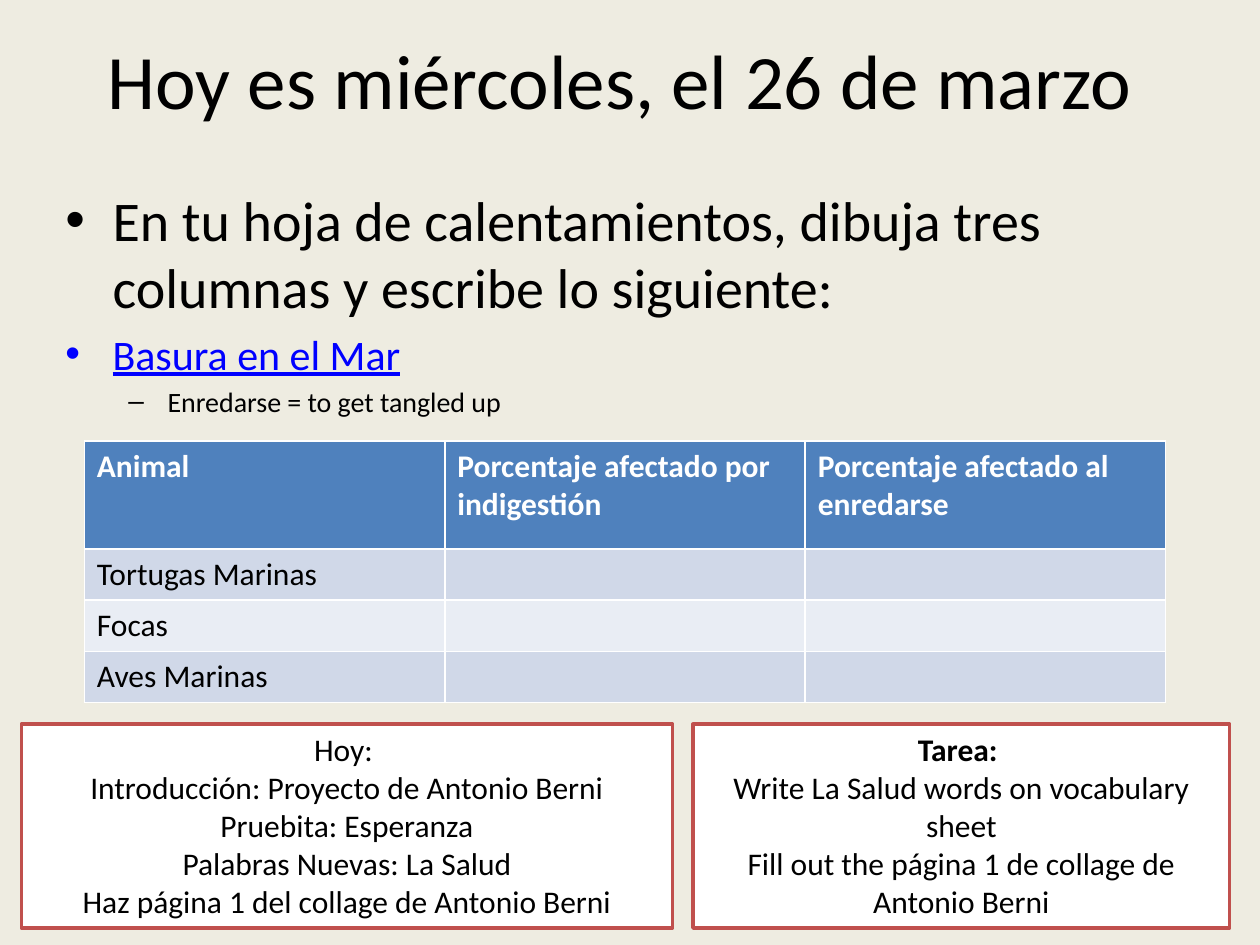
from dataclasses import dataclass

from lxml.etree import SubElement
from pptx import Presentation
from pptx.dml.color import RGBColor as Rgb
from pptx.enum.shapes import MSO_SHAPE as Shape
from pptx.enum.text import MSO_ANCHOR as Anchor, MSO_AUTO_SIZE as AutoSize, PP_ALIGN as Align
from pptx.oxml.ns import qn
from pptx.util import Cm, Pt


@dataclass(frozen=True)
class Theme:
    font: str = "Calibri"
    background: str = "EEECE1"
    ink: str = "000000"
    paper: str = "FFFFFF"
    link: str = "0000FF"
    header: str = "4F81BD"
    bands: tuple = ("D0D8E8", "E9EDF4")
    frame: str = "C0504D"
    title_size: int = 44
    task_size: int = 32
    link_size: int = 24
    note_size: int = 16
    body_size: int = 18


THEME = Theme()

TITLE = "Hoy es miércoles, el 26 de marzo"
WARM_UP = [
    ("En tu hoja de calentamientos, dibuja tres columnas y escribe lo siguiente:",
     0, THEME.task_size, THEME.ink),
    ("Basura en el Mar", 0, THEME.link_size, THEME.link),
    ("Enredarse = to get tangled up", 1, THEME.note_size, THEME.ink),
]
BULLETS = [("•", 0.95, 0.95), ("–", 2.06, 0.79)]
HEADINGS = ["Animal", "Porcentaje afectado por indigestión", "Porcentaje afectado al enredarse"]
ANIMALS = ["Tortugas Marinas", "Focas", "Aves Marinas"]
AGENDA = [
    "Hoy: ",
    "Introducción: Proyecto de Antonio Berni",
    "Pruebita: Esperanza",
    "Palabras Nuevas: La Salud",
    "Haz página 1 del collage de Antonio Berni",
]
HOMEWORK = [
    "Tarea: ",
    "Write La Salud words on vocabulary sheet",
    "Fill out the página 1 de collage de Antonio Berni",
]
PANELS = [(AGENDA, 0.43, 13.13, False), (HOMEWORK, 13.97, 10.82, True)]
PANEL_TOP, PANEL_HEIGHT = 14.6, 4.11
TEXT_LEFT, TEXT_WIDTH = 1.07, 22.86
TABLE_LEFT, TABLE_TOP, TABLE_WIDTH = 1.7, 8.89, 21.8
HEADER_HEIGHT, ROW_HEIGHT = 2.18, 1.03


def style(paragraph, size, color, bold=False):
    font = paragraph.font
    font.name, font.size, font.bold = THEME.font, Pt(size), bold
    font.color.rgb = Rgb.from_string(color)


def paint(fill, color):
    fill.solid()
    fill.fore_color.rgb = Rgb.from_string(color)


def write_lines(frame, lines):
    frame.text = "\n".join(lines)
    return frame.paragraphs


def add_text_area(slide, top, height, lines):
    frame = slide.shapes.add_textbox(
        Cm(TEXT_LEFT), Cm(top), Cm(TEXT_WIDTH), Cm(height)).text_frame
    frame.word_wrap = True
    write_lines(frame, lines)
    return frame


def add_bullet(paragraph, level):
    mark, margin, hanging = BULLETS[level]
    paragraph.level = level
    properties = paragraph._p.get_or_add_pPr()
    properties.set("marL", str(Cm(margin)))
    properties.set("indent", str(-Cm(hanging)))
    SubElement(properties, qn("a:buFont")).set("typeface", "Arial")
    SubElement(properties, qn("a:buChar")).set("char", mark)


def add_title(slide):
    frame = add_text_area(slide, 0, 3.18, [TITLE])
    frame.vertical_anchor = Anchor.MIDDLE
    heading = frame.paragraphs[0]
    heading.alignment = Align.CENTER
    style(heading, THEME.title_size, THEME.ink)


def add_warm_up(slide):
    frame = add_text_area(slide, 3.61, 12.57, [step[0] for step in WARM_UP])
    for paragraph, (_, level, size, color) in zip(frame.paragraphs, WARM_UP):
        paragraph.space_before = Pt(size * 0.2)
        add_bullet(paragraph, level)
        style(paragraph, size, color)
        if color == THEME.link:
            link_font = paragraph.runs[0].font
            link_font.underline = True
            link_font.size = Pt(size)
            link_font.color.rgb = Rgb.from_string(color)


def add_animal_table(slide):
    rows = [HEADINGS] + [[animal, "", ""] for animal in ANIMALS]
    heights = [HEADER_HEIGHT] + [ROW_HEIGHT] * len(ANIMALS)
    table = slide.shapes.add_table(
        len(rows), len(HEADINGS), Cm(TABLE_LEFT), Cm(TABLE_TOP),
        Cm(TABLE_WIDTH), Cm(sum(heights))).table
    for r, (row, height) in enumerate(zip(rows, heights)):
        table.rows[r].height = Cm(height)
        is_header = r == 0
        fill = THEME.header if is_header else THEME.bands[(r - 1) % 2]
        color = THEME.paper if is_header else THEME.ink
        for c, wording in enumerate(row):
            cell = table.cell(r, c)
            cell.text = wording
            paint(cell.fill, fill)
            style(cell.text_frame.paragraphs[0], THEME.body_size, color, is_header)


def add_panel(slide, lines, left, width, bold_heading):
    panel = slide.shapes.add_shape(
        Shape.RECTANGLE, Cm(left), Cm(PANEL_TOP), Cm(width), Cm(PANEL_HEIGHT))
    panel.shadow.inherit = False
    paint(panel.fill, THEME.paper)
    paint(panel.line.fill, THEME.frame)
    panel.line.width = Pt(2)
    frame = panel.text_frame
    frame.word_wrap = True
    frame.auto_size = AutoSize.SHAPE_TO_FIT_TEXT
    frame.vertical_anchor = Anchor.TOP
    for i, paragraph in enumerate(write_lines(frame, lines)):
        paragraph.alignment = Align.CENTER
        style(paragraph, THEME.body_size, THEME.ink, bold_heading and i == 0)


def main():
    """Build the Spanish class warm-up slide."""
    deck = Presentation()
    deck.slide_width, deck.slide_height = Cm(25.4), Cm(19.05)
    slide = deck.slides.add_slide(deck.slide_layouts[6])
    paint(slide.background.fill, THEME.background)
    add_title(slide)
    add_warm_up(slide)
    add_animal_table(slide)
    for panel in PANELS:
        add_panel(slide, *panel)
    deck.save("out.pptx")


if __name__ == "__main__":
    main()
